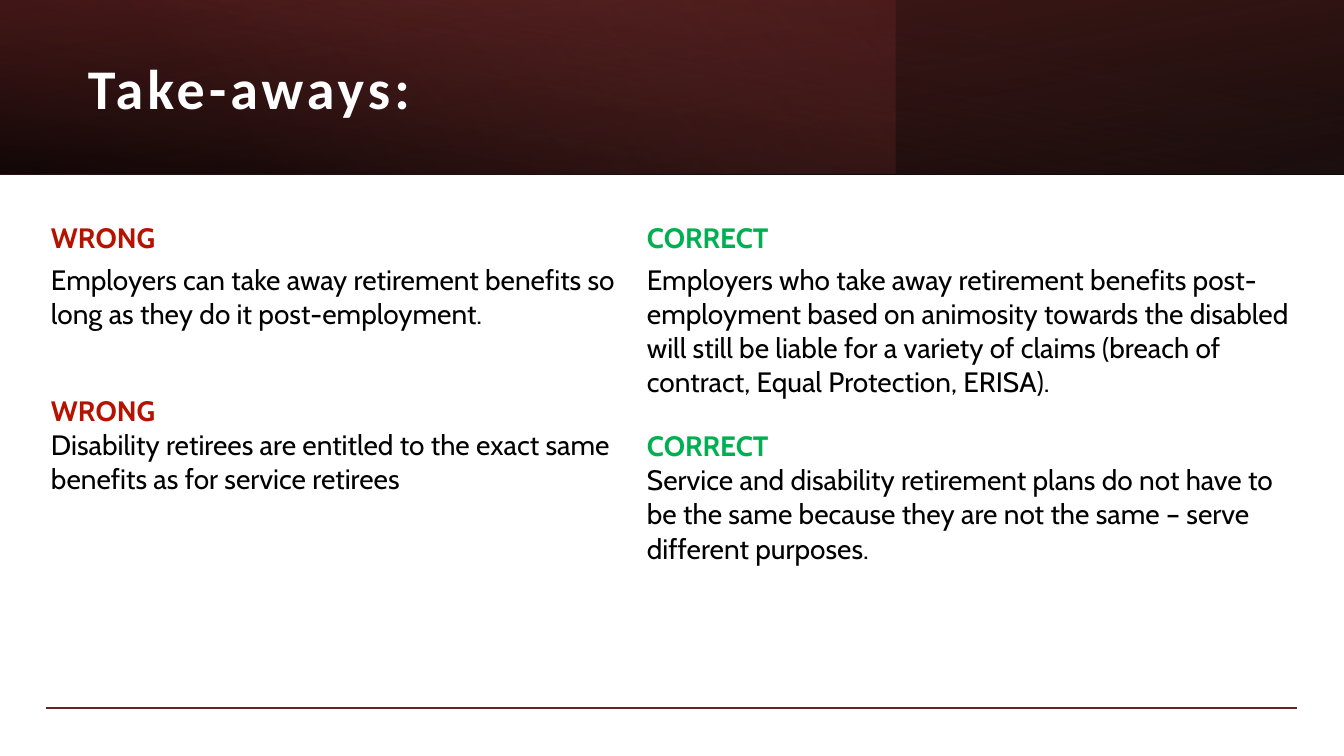
from dataclasses import dataclass

from lxml import etree
from pptx import Presentation
from pptx import util as u
from pptx.dml.color import RGBColor
from pptx.enum import shapes, text
from pptx.oxml import ns

EMU_PER_PX = 914400 / 100.8


@dataclass(frozen=True)
class Theme:
    wrong: str = "B51200"
    correct: str = "00B050"
    body: str = "000000"
    title: str = "FFFFFF"
    maroon: str = "632423"
    dark_maroon: str = "4A1B1A"
    rose: str = "C45A58"
    black: str = "000000"
    title_font: str = "Calibri"
    body_font: str = "Cabin"
    title_size: int = 40
    body_size: int = 20


THEME = Theme()


def px(length):
    return u.Emu(round(length * EMU_PER_PX))


def child(parent, tag, **attributes):
    return etree.SubElement(parent, ns.qn(tag), attributes)


def add_band(page, width, height, stops, angle, flip=False, rotation=0):
    band = page.shapes.add_shape(
        shapes.MSO_SHAPE.RECTANGLE, 0, 0, px(width), px(height))
    band.shadow.inherit = False
    band.line.fill.background()
    band.rotation = rotation
    properties = band._element.spPr
    if flip:
        properties.find(ns.qn("a:xfrm")).set("flipH", "1")
    band.fill.background()
    gradient = etree.Element(ns.qn("a:gradFill"), rotWithShape="1")
    stop_list = child(gradient, "a:gsLst")
    for position, color, opacity in stops:
        stop = child(stop_list, "a:gs", pos=str(position * 1000))
        tint = child(stop, "a:srgbClr", val=color)
        child(tint, "a:alpha", val=str(opacity * 1000))
    child(gradient, "a:lin", ang=str(angle * 60000), scaled="0")
    properties.replace(properties.find(ns.qn("a:noFill")), gradient)


def add_span(para, words, font, size, color, bold=False):
    span = para.add_run()
    span.text = words
    span.font.name = font
    span.font.size = u.Pt(size)
    span.font.bold = bold
    span.font.color.rgb = RGBColor.from_string(color)
    return span


def add_title(page, words):
    box = page.shapes.add_textbox(px(78), px(27), px(778), px(128))
    frame = box.text_frame
    frame.word_wrap = True
    frame.vertical_anchor = text.MSO_ANCHOR.MIDDLE
    para = frame.paragraphs[0]
    para.line_spacing = 0.9
    span = add_span(para, words, THEME.title_font, THEME.title_size,
                    THEME.title, bold=True)
    span.font._element.set("spc", "300")


def fill_cell(cell, lines, anchor):
    cell.fill.background()
    cell.vertical_anchor = anchor
    cell.margin_left = cell.margin_right = px(4)
    cell.margin_top, cell.margin_bottom = 0, px(7)
    frame = cell.text_frame
    for index, (words, color, bold, gap) in enumerate(lines):
        para = frame.add_paragraph() if index else frame.paragraphs[0]
        if gap:
            para.space_before = u.Pt(gap)
        add_span(para, words, THEME.body_font, THEME.body_size, color, bold)


def underline_cell(cell):
    border = etree.Element(ns.qn("a:lnB"), w=str(u.Pt(1)))
    solid = child(border, "a:solidFill")
    child(solid, "a:srgbClr", val=THEME.maroon)
    cell._tc.get_or_add_tcPr().insert(0, border)


def add_comparison(page, columns):
    widths, heights = (596, 653), (45, 445)
    frame = page.shapes.add_table(
        len(heights), len(widths), px(47), px(218),
        px(sum(widths)), px(sum(heights)))
    table = frame.table
    table.first_row = table.horz_banding = False
    for row, height in zip(table.rows, heights):
        row.height = px(height)
    for index, (width, column) in enumerate(zip(widths, columns)):
        heading, color, first, second, gap = column
        table.columns[index].width = px(width)
        fill_cell(table.cell(0, index), [(heading, color, True, 0)],
                  text.MSO_ANCHOR.BOTTOM)
        claims = table.cell(1, index)
        fill_cell(claims, [(first, THEME.body, False, 0),
                           (heading, color, True, gap),
                           (second, THEME.body, False, 0)],
                  text.MSO_ANCHOR.TOP)
        underline_cell(claims)


def main():
    deck = Presentation()
    deck.slide_width, deck.slide_height = px(1344), px(756)
    page = deck.slides.add_slide(deck.slide_layouts[6])

    add_band(page, 1344, 174,
             [(0, THEME.black, 96), (100, THEME.dark_maroon, 100)],
             100, flip=True, rotation=180)
    add_band(page, 896, 174,
             [(0, THEME.maroon, 41), (74, THEME.rose, 0)], 140)
    add_band(page, 1344, 174,
             [(0, THEME.black, 63), (78, THEME.maroon, 15)], 260, flip=True)
    add_title(page, "Take-aways:")
    add_comparison(page, [
        ("WRONG", THEME.wrong,
         "Employers can take away retirement benefits so long as they do it "
         "post-employment.",
         "Disability retirees are entitled to the exact same benefits as for "
         "service retirees", 45),
        ("CORRECT", THEME.correct,
         "Employers who take away retirement benefits post-employment based "
         "on animosity towards the disabled will still be liable for a "
         "variety of claims (breach of contract, Equal Protection, ERISA).",
         "Service and disability retirement plans do not have to be the same "
         "because they are not the same – serve different purposes.", 21.5),
    ])
    deck.save("out.pptx")


if __name__ == "__main__":
    main()
